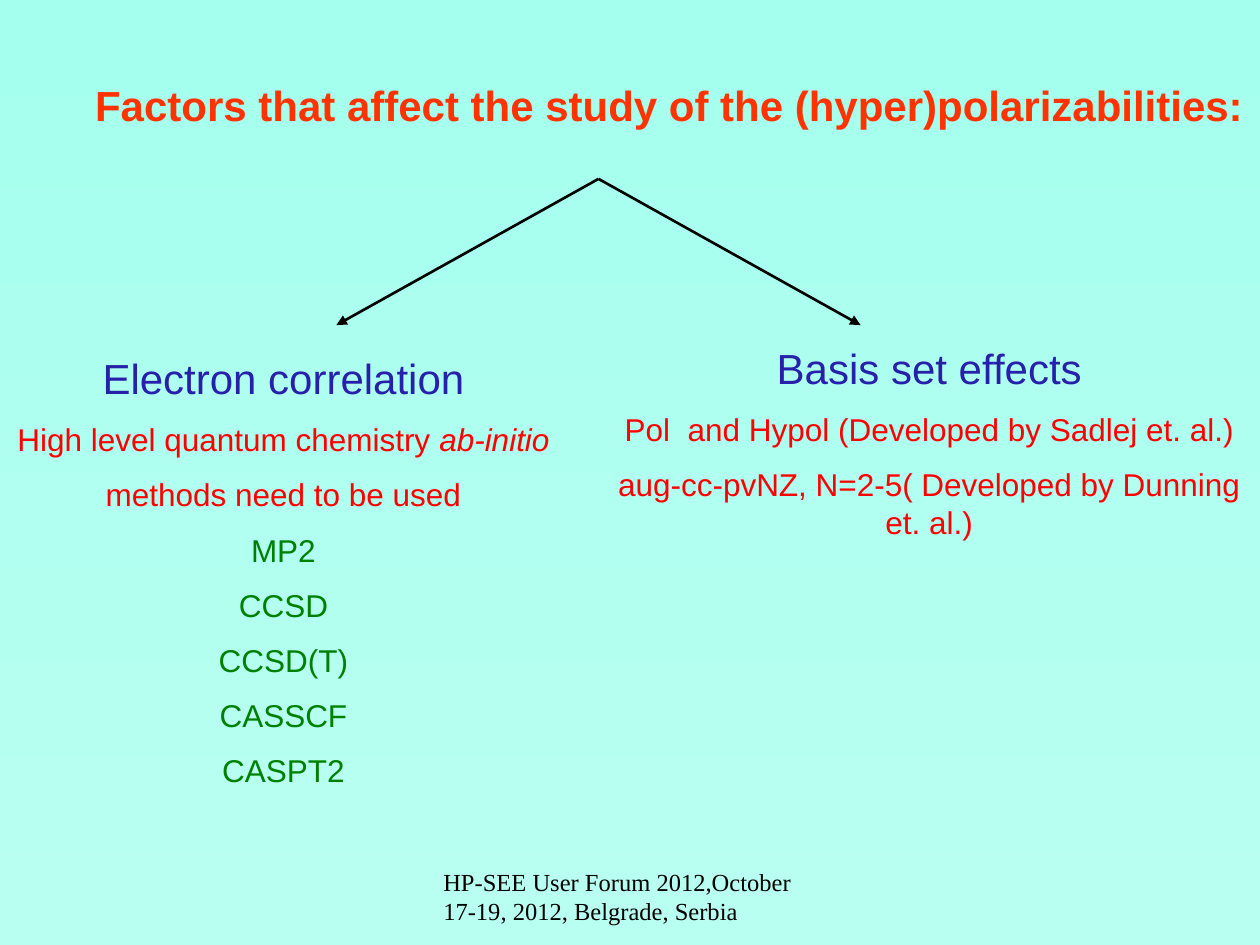
from lxml.etree import SubElement
from pptx import Presentation
from pptx.dml.color import RGBColor
from pptx.enum.shapes import MSO_CONNECTOR as Connector
from pptx.enum.text import MSO_AUTO_SIZE as AutoSize, PP_ALIGN as Align
from pptx.oxml.ns import qn
from pptx.util import Inches, Pt

# Content: each paragraph is (style, text, optional italic ending)
TITLE = [("title", "Factors that affect the study of the (hyper)polarizabilities:")]
CORRELATION = [
    ("heading", "Electron correlation"),
    ("note", "High level quantum chemistry ", "ab-initio"),
    ("note", "methods need to be used"),
] + [("method", name) for name in ("MP2", "CCSD", "CCSD(T)", "CASSCF", "CASPT2")]
BASIS_SETS = [
    ("heading", "Basis set effects"),
    ("note", "Pol  and Hypol (Developed by Sadlej et. al.)"),
    ("note", "aug-cc-pvNZ, N=2-5( Developed by Dunning et. al.)"),
]
FOOTER = [("footer", "HP-SEE User Forum 2012,October 17-19, 2012, Belgrade, Serbia")]

THEME = {
    "background": ("A5FFEE", "B9FFF1"),
    "arrow": "000000",
    "title": dict(name="Arial", size=24, color="FF3300", bold=True),
    "heading": dict(name="Arial", size=24, color="2720AA"),
    "note": dict(name="Arial", size=18, color="FF0000"),
    "method": dict(name="Arial", size=18, color="008000"),
    "footer": dict(name="Times New Roman", size=14, color="000000"),
}
SPACE_BEFORE = 0.55  # share of the type size

# Layout: left, top, width, height, then frame settings
BLOCKS = [
    (TITLE, (0.08, 0.58, 9.92, 0.5), Align.CENTER,
     dict(margin_left=Inches(0.64), auto_size=AutoSize.SHAPE_TO_FIT_TEXT)),
    (CORRELATION, (0, 2.75, 4.5, 3.66), Align.CENTER,
     dict(auto_size=AutoSize.SHAPE_TO_FIT_TEXT)),
    (BASIS_SETS, (4.75, 2.67, 5.25, 1.7), Align.CENTER,
     dict(auto_size=AutoSize.SHAPE_TO_FIT_TEXT)),
    (FOOTER, (3.42, 6.83, 3.17, 0.5), Align.LEFT, {}),
]
FORK, REACH, DROP = (4.75, 1.42), 2.08, 1.16


def add_run(paragraph, text, style, italic=False):
    run = paragraph.add_run()
    run.text = text
    font = run.font
    formats = dict(THEME[style], italic=italic)
    font.color.rgb = RGBColor.from_string(formats.pop("color"))
    formats["size"] = Pt(formats["size"])
    for key, value in formats.items():
        setattr(font, key, value)


def add_block(slide, paragraphs, box, align, settings):
    frame = slide.shapes.add_textbox(*map(Inches, box)).text_frame
    for key, value in dict(settings, word_wrap=True).items():
        setattr(frame, key, value)
    for index, (style, text, *ending) in enumerate(paragraphs):
        paragraph = frame.paragraphs[0] if index == 0 else frame.add_paragraph()
        paragraph.alignment = align
        if index:
            paragraph.space_before = Pt(round(THEME[style]["size"] * SPACE_BEFORE, 1))
        add_run(paragraph, text, style)
        for italic_text in ending:
            add_run(paragraph, italic_text, style, italic=True)


def add_arrow(slide, start, end):
    arrow = slide.shapes.add_connector(Connector.STRAIGHT, *map(Inches, start + end))
    arrow.line.color.rgb = RGBColor.from_string(THEME["arrow"])
    arrow.line.width = Pt(1.5)
    SubElement(arrow.line._get_or_add_ln(), qn("a:tailEnd"), type="triangle")
    SubElement(arrow._element.spPr, qn("a:effectLst"))


def main():
    deck = Presentation()
    deck.slide_width, deck.slide_height = Inches(10), Inches(7.5)
    slide = deck.slides.add_slide(deck.slide_layouts[6])

    # Background, top to bottom
    fill = slide.background.fill
    fill.gradient()
    fill.gradient_angle = 270
    for position, (stop, color) in enumerate(zip(fill.gradient_stops, THEME["background"])):
        stop.position = position
        stop.color.rgb = RGBColor.from_string(color)

    # Text blocks
    for block in BLOCKS:
        add_block(slide, *block)

    # Two arrows from the fork to the factors
    for side in (-1, 1):
        add_arrow(slide, FORK, (FORK[0] + side * REACH, FORK[1] + DROP))

    deck.save("out.pptx")


if __name__ == "__main__":
    main()
